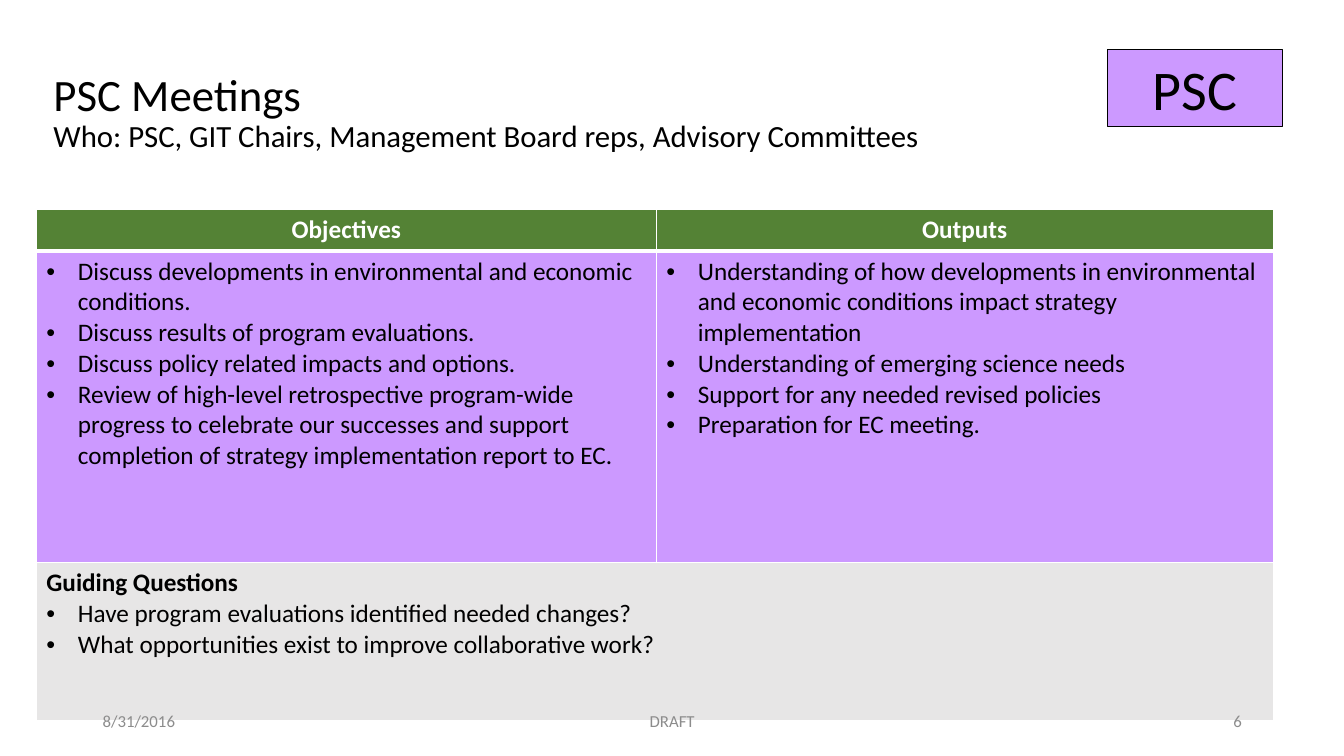
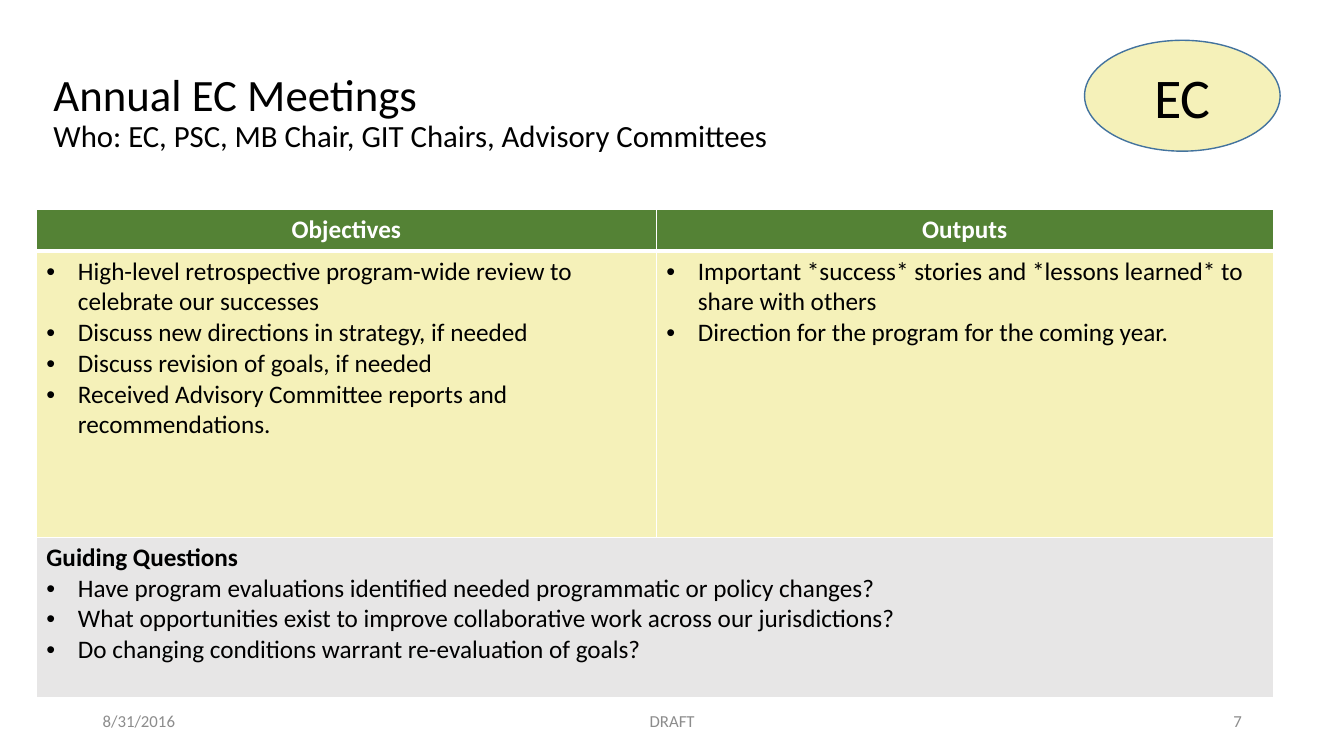
from lxml.etree import SubElement
from pptx import Presentation
from pptx.dml.color import RGBColor
from pptx.enum.shapes import MSO_SHAPE as SHAPE
from pptx.enum.text import MSO_ANCHOR as ANCHOR, MSO_AUTO_SIZE as AUTO_SIZE, PP_ALIGN as ALIGN
from pptx.oxml.ns import qn
from pptx.util import Pt

COLORS = {
    "black": "000000", "white": "FFFFFF", "header": "548235", "questions": "E7E6E6",
    "footer": "8C8C8C", "purple": "CC99FF", "yellow": "F5F1B9", "blue": "43739E",
}
FONT = "Calibri"
TITLE_ONLY = 5
BULLET_INDENT = 22.5
HEADER_HEIGHT = 29.5

MEETINGS = [
    dict(
        number=6, title="PSC Meetings ", color="purple",
        who="Who: PSC, GIT Chairs, Management Board reps, Advisory Committees",
        badge=dict(text="PSC", kind=SHAPE.RECTANGLE, area=(791.3, 35.3, 124.6, 55.4),
                   line="black", line_width=0.75, anchor=ANCHOR.TOP),
        objectives=[
            "Discuss developments in environmental and economic conditions.",
            "Discuss results of program evaluations.",
            "Discuss policy related impacts and options.",
            "Review of high-level retrospective program-wide progress to celebrate our "
            "successes and support completion of strategy implementation report to EC.",
        ],
        outputs=[
            "Understanding of how developments in environmental and economic conditions "
            "impact strategy implementation",
            "Understanding of emerging science needs",
            "Support for any needed revised policies",
            "Preparation for EC meeting.",
        ],
        questions=[
            "Have program evaluations identified needed changes?",
            "What opportunities exist to improve collaborative work?",
        ],
        heights=(222.5, 113),
    ),
    dict(
        number=7, title="Annual EC Meetings ", color="yellow",
        who="Who: EC, PSC, MB Chair, GIT Chairs, Advisory Committees",
        badge=dict(text="EC", kind=SHAPE.OVAL, area=(774.7, 28.8, 139.7, 79.2),
                   line="blue", line_width=1, anchor=ANCHOR.MIDDLE),
        objectives=[
            "High-level retrospective program-wide review to celebrate our successes",
            "Discuss new directions in strategy, if needed",
            "Discuss revision of goals, if needed",
            "Received Advisory Committee reports and recommendations.",
        ],
        outputs=[
            "Important *success* stories and *lessons learned* to share with others",
            "Direction for the program for the coming year.",
        ],
        questions=[
            "Have program evaluations identified needed programmatic or policy changes?",
            "What opportunities exist to improve collaborative work across our jurisdictions?",
            "Do changing conditions warrant re-evaluation of goals?",
        ],
        heights=(204.5, 114.5),
    ),
]


def rgb(name):
    return RGBColor.from_string(COLORS[name])


def points(values):
    return [Pt(value) for value in values]


def write(para, text, size=18, color="black", bold=False, align=ALIGN.LEFT, bullet=False):
    """Add one formatted span to a paragraph."""
    para.alignment = align
    span = para.add_run()
    span.text = text
    span.font.name = FONT
    span.font.size = Pt(size)
    span.font.bold = bold
    span.font.color.rgb = rgb(color)
    if bullet:
        properties = para._p.get_or_add_pPr()
        properties.set("marL", str(Pt(BULLET_INDENT)))
        properties.set("indent", str(-Pt(BULLET_INDENT)))
        SubElement(properties, qn("a:buFont"), typeface="Arial")
        SubElement(properties, qn("a:buChar"), char="•")


def add_borders(cell, top=1, bottom=1):
    properties = cell._tc.get_or_add_tcPr()
    for side, width in (("L", 1), ("R", 1), ("T", top), ("B", bottom)):
        line = SubElement(properties, qn(f"a:ln{side}"), w=str(Pt(width)))
        fill = SubElement(line, qn("a:solidFill"))
        SubElement(fill, qn("a:srgbClr"), val=COLORS["white"])


class MeetingDeck:
    def __init__(self):
        self.deck = Presentation()
        self.deck.slide_width, self.deck.slide_height = points((960, 540))
        self.page = None

    def add_page(self, title, who):
        self.page = self.deck.slides.add_slide(self.deck.slide_layouts[TITLE_ONLY])
        box = self.page.shapes.title
        box.left, box.top, box.width, box.height = points((31, 28.8, 684.7, 104.4))
        frame = box.text_frame
        frame.auto_size = AUTO_SIZE.NONE
        frame.vertical_anchor = ANCHOR.MIDDLE
        para = frame.paragraphs[0]
        para.line_spacing = 0.9
        write(para, title, size=32)
        para.add_line_break()
        write(para, who, size=22)

    def add_badge(self, text, kind, area, color, line, line_width, anchor):
        badge = self.page.shapes.add_shape(kind, *points(area))
        badge.shadow.inherit = False
        badge.fill.solid()
        badge.fill.fore_color.rgb = rgb(color)
        badge.line.color.rgb = rgb(line)
        badge.line.width = Pt(line_width)
        badge.text_frame.vertical_anchor = anchor
        para = badge.text_frame.paragraphs[0]
        write(para, text, size=40, align=ALIGN.CENTER)
        before = SubElement(para._p.get_or_add_pPr(), qn("a:spcBef"))
        SubElement(before, qn("a:spcPct"), val="50000")

    def fill_cell(self, cell, color, bullets=(), heading=None, heading_format=None, **borders):
        add_borders(cell, **borders)
        cell.fill.solid()
        cell.fill.fore_color.rgb = rgb(color)
        lines = [(heading, dict(bold=True, **(heading_format or {})))] if heading else []
        lines += [(text, dict(bullet=True)) for text in bullets]
        frame = cell.text_frame
        for index, (text, style) in enumerate(lines):
            para = frame.add_paragraph() if index else frame.paragraphs[0]
            write(para, text, **style)

    def add_agenda(self, objectives, outputs, questions, heights, color):
        row_heights = (HEADER_HEIGHT, *heights)
        area = points((26, 149.8, 883.4, sum(row_heights)))
        table = self.page.shapes.add_table(3, 2, *area).table
        table.horz_banding = False
        for column, width in zip(table.columns, (442.8, 440.6)):
            column.width = Pt(width)
        for row, height in zip(table.rows, row_heights):
            row.height = Pt(height)
        header_format = dict(color="white", align=ALIGN.CENTER)
        for index, (name, items) in enumerate((("Objectives", objectives), ("Outputs", outputs))):
            self.fill_cell(table.cell(0, index), "header", heading=name,
                           heading_format=header_format, bottom=3)
            self.fill_cell(table.cell(1, index), color, items, top=3)
        table.cell(2, 0).merge(table.cell(2, 1))
        self.fill_cell(table.cell(2, 0), "questions", questions, heading="Guiding Questions")
        add_borders(table.cell(2, 1))

    def add_footer(self, number):
        for text, left, width, align in (
            ("8/31/2016", 66.2, 216, ALIGN.LEFT),
            (str(number), 678.2, 216, ALIGN.RIGHT),
            ("DRAFT", 318.2, 324, ALIGN.CENTER),
        ):
            box = self.page.shapes.add_textbox(*points((left, 500.4, width, 28.8)))
            frame = box.text_frame
            frame.word_wrap = True
            frame.vertical_anchor = ANCHOR.MIDDLE
            write(frame.paragraphs[0], text, size=12, color="footer", align=align)

    def add_meeting(self, number, title, who, color, badge, **agenda):
        self.add_page(title, who)
        self.add_badge(color=color, **badge)
        self.add_agenda(color=color, **agenda)
        self.add_footer(number)


def main():
    meetings = MeetingDeck()
    for meeting in MEETINGS:
        meetings.add_meeting(**meeting)
    meetings.deck.save("out.pptx")


if __name__ == "__main__":
    main()
